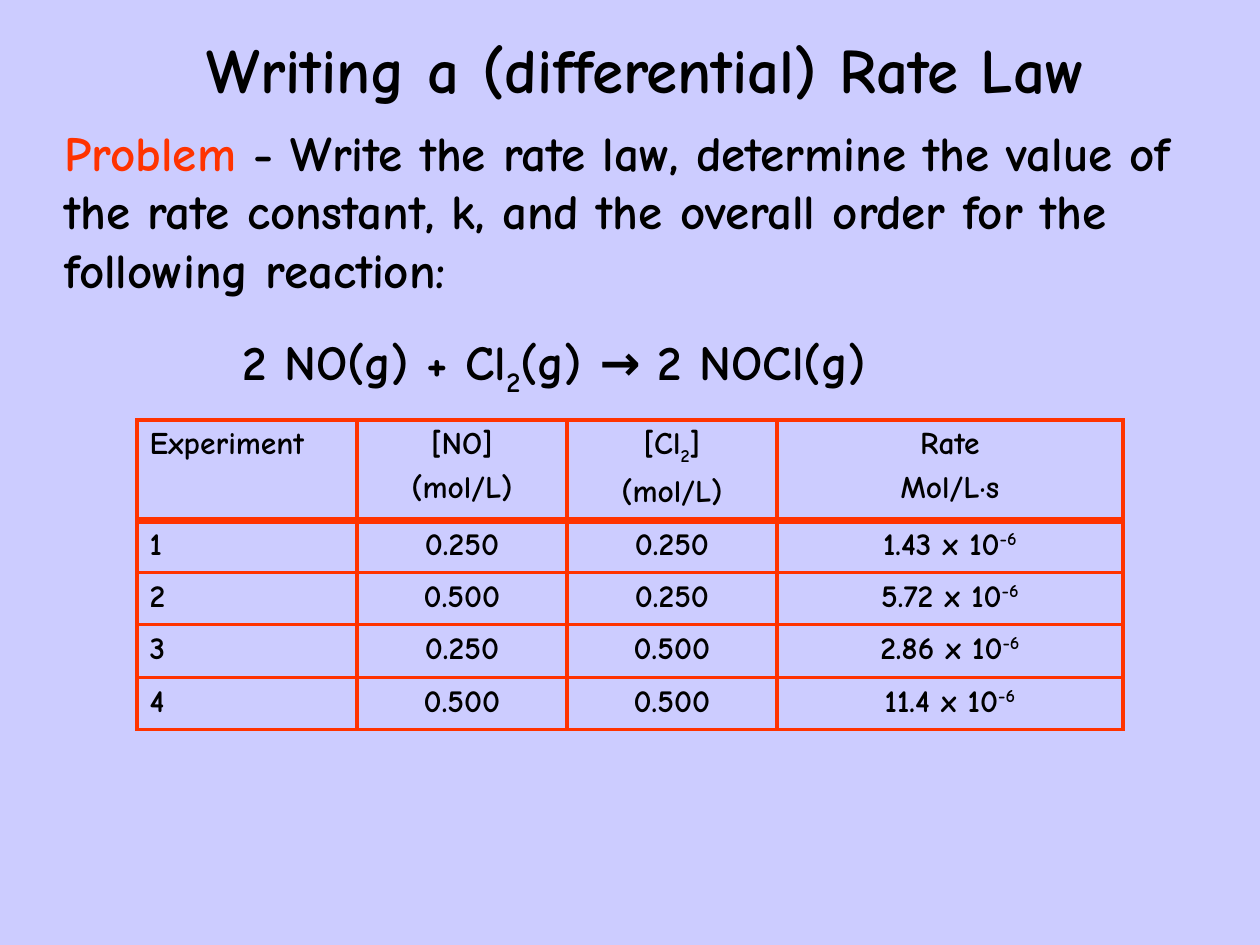
from pptx import Presentation
from pptx.dml.color import RGBColor
from pptx.enum.text import MSO_ANCHOR, MSO_AUTO_SIZE, PP_ALIGN
from pptx.oxml.ns import qn
from pptx.util import Emu, Pt
from lxml.etree import SubElement

LAVENDER = RGBColor(0xCC, 0xCC, 0xFF)
ORANGE_RED = RGBColor(0xFF, 0x33, 0x00)
BLACK = RGBColor(0, 0, 0)
FONT = "Comic Neue"
SUBSCRIPT, SUPERSCRIPT = -25000, 30000


def px(length):
    return Emu(round(length * 914400 / 126))


class RateLawSlide:
    def __init__(self, deck):
        self.page = deck.slides.add_slide(deck.slide_layouts[6])
        self.page.background.fill.solid()
        self.page.background.fill.fore_color.rgb = LAVENDER

    def add_spans(self, para, spans, size, align=PP_ALIGN.LEFT):
        para.alignment = align
        for text, color, baseline in spans:
            span = para.add_run()
            span.text = text
            span.font.name = FONT
            span.font.size = Pt(size)
            span.font.bold = True
            span.font.color.rgb = color
            if baseline:
                span.font._element.set("baseline", str(baseline))

    def text(self, left, top, width, height, spans, size, align=PP_ALIGN.LEFT,
             anchor=MSO_ANCHOR.TOP, wrap=True, grow=True):
        box = self.page.shapes.add_textbox(px(left), px(top), px(width), px(height))
        frame = box.text_frame
        frame.word_wrap = wrap
        frame.vertical_anchor = anchor
        frame.auto_size = MSO_AUTO_SIZE.SHAPE_TO_FIT_TEXT if grow else MSO_AUTO_SIZE.NONE
        self.add_spans(frame.paragraphs[0], spans, size, align)

    def border(self, cell, side, width):
        line = SubElement(cell._tc.get_or_add_tcPr(), qn(f"a:ln{side}"), w=str(Pt(width)))
        fill = SubElement(line, qn("a:solidFill"))
        SubElement(fill, qn("a:srgbClr"), val=str(ORANGE_RED))

    def table(self, left, top, widths, heights, rows):
        frame = self.page.shapes.add_table(len(rows), len(widths), px(left), px(top),
                                           px(sum(widths)), px(sum(heights)))
        table = frame.table
        table.first_row = table.horz_banding = False
        for column, width in zip(table.columns, widths):
            column.width = px(width)
        for row, height in zip(table.rows, heights):
            row.height = px(height)
        for r, row in enumerate(rows):
            for c, lines in enumerate(row):
                self.cell(table.cell(r, c), lines, r, c)

    def cell(self, cell, lines, r, c):
        for side in "LRTB":
            under_header = (r, side) in ((0, "B"), (1, "T"))
            self.border(cell, side, 4.5 if under_header else 2.25)
        cell.fill.background()
        for index, spans in enumerate(lines):
            frame = cell.text_frame
            para = frame.add_paragraph() if index else frame.paragraphs[0]
            para.space_before = Pt(4)
            self.add_spans(para, spans, 18, PP_ALIGN.CENTER if c else PP_ALIGN.LEFT)


def plain(text):
    return [(text, BLACK, 0)]


def chlorine(before, after):
    return plain(before) + [("2", BLACK, SUBSCRIPT)] + plain(after)


def main():
    deck = Presentation()
    deck.slide_width, deck.slide_height = px(1260), px(945)
    slide = RateLawSlide(deck)

    slide.text(94, 0, 1103, 136, plain("Writing a (differential) Rate Law"), 36,
               PP_ALIGN.CENTER, MSO_ANCHOR.MIDDLE, grow=False)
    slide.text(230, 325, 742, 72, chlorine("2 NO(g) + Cl", "(g) → 2 NOCl(g)"), 28,
               wrap=False)
    slide.text(52, 116, 1145, 189, [
        ("Problem ", ORANGE_RED, 0),
        ("- Write the rate law, determine the value of the rate constant, k, "
         "and the overall order for the following reaction:", BLACK, 0)], 28)

    unit = plain("(mol/L)")
    rows = [[[plain("Experiment")], [plain("[NO]"), unit], [chlorine("[Cl", "]"), unit],
             [plain("Rate"), plain("Mol/L·s")]]]
    results = [("0.250", "0.250", "1.43"), ("0.500", "0.250", "5.72"),
               ("0.250", "0.500", "2.86"), ("0.500", "0.500", "11.4")]
    for number, (oxide, chloride, rate) in enumerate(results, 1):
        power = plain(f"{rate} x 10") + [("-6", BLACK, SUPERSCRIPT)]
        rows.append([[plain(str(number))], [plain(oxide)], [plain(chloride)], [power]])
    slide.table(137, 420, [220, 210, 210, 346], [94, 52, 52, 53, 52], rows)

    deck.save("out.pptx")


if __name__ == "__main__":
    main()
